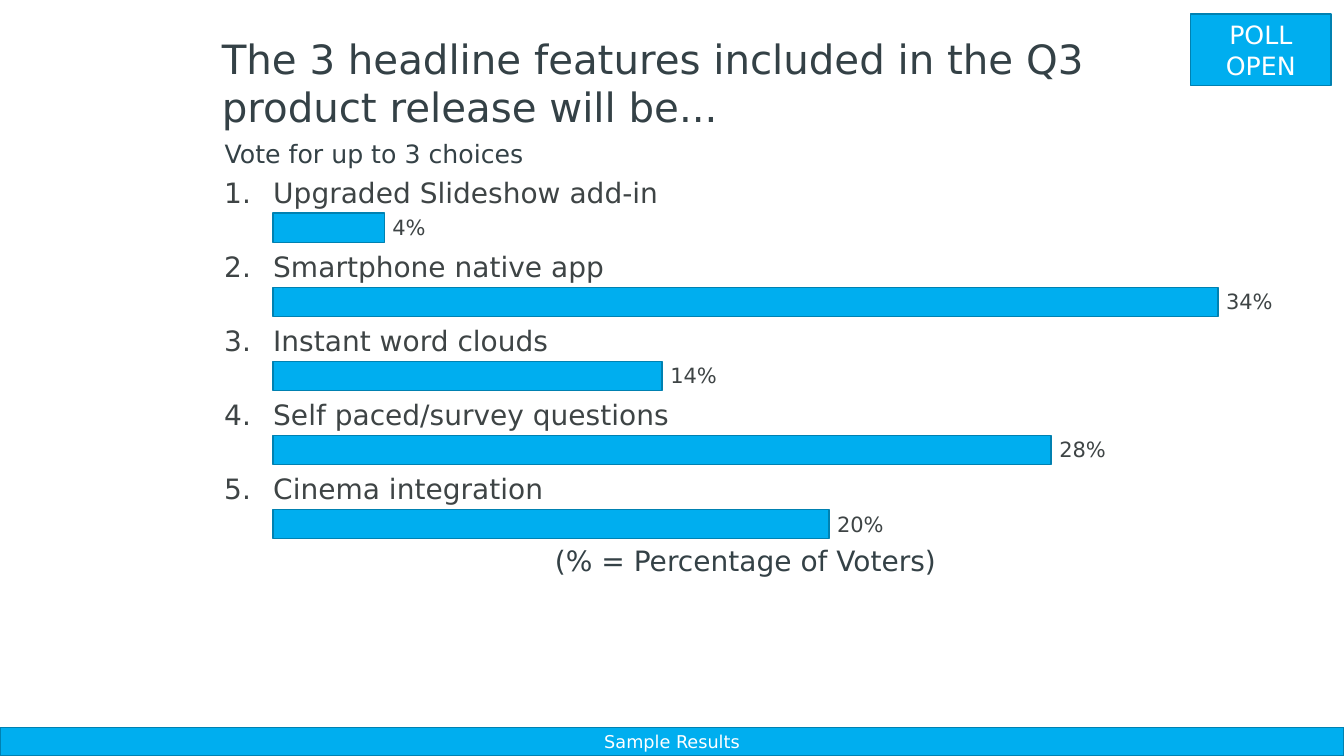
from dataclasses import dataclass
from typing import Any

import pptx
import pptx.dml.color
import pptx.enum.shapes
import pptx.enum.text
import pptx.util

Inches = pptx.util.Inches
ALIGN = pptx.enum.text.PP_ALIGN
ANCHOR = pptx.enum.text.MSO_ANCHOR

FONT = "DejaVu Sans"
BLUE, BLUE_EDGE, WHITE = "00AEEF", "0081B1", "FFFFFF"
HEADING, BODY = "344146", "3E4445"

NUMBER_LEFT, BAR_LEFT = 2.1, 2.71
FIRST_TOP, CHOICE_PITCH = 1.68, 0.735
BAR_HEIGHT, LONGEST_BAR = 0.29, 9.37


@dataclass(frozen=True)
class Area:
    left: float
    top: float
    width: float
    height: float

    def lengths(self) -> list[int]:
        return [Inches(value) for value in (self.left, self.top, self.width, self.height)]


@dataclass(frozen=True)
class TextStyle:
    size: float
    color: str
    align: Any = ALIGN.LEFT
    anchor: Any = ANCHOR.TOP
    wrap: bool = True
    insets: tuple[float, float, float, float] = (0.1, 0.05, 0.1, 0.05)


@dataclass(frozen=True)
class Choice:
    label: str
    percent: int


CHOICES = [
    Choice("Upgraded Slideshow add-in", 4),
    Choice("Smartphone native app", 34),
    Choice("Instant word clouds", 14),
    Choice("Self paced/survey questions", 28),
    Choice("Cinema integration", 20),
]

TITLE = TextStyle(28.8, HEADING, anchor=ANCHOR.MIDDLE)
FOOTER = TextStyle(12.6, WHITE, ALIGN.CENTER, ANCHOR.MIDDLE, wrap=False)
STATUS = TextStyle(18, WHITE, ALIGN.CENTER, ANCHOR.MIDDLE)
HINT = TextStyle(18, HEADING, ALIGN.CENTER, wrap=False)
NUMBER = TextStyle(20, BODY, ALIGN.RIGHT, wrap=False, insets=(0.1, 0.06, 0.22, 0))
LABEL = TextStyle(20, BODY, insets=(0, 0.06, 0, 0.03))
PERCENT = TextStyle(15, BODY, wrap=False, insets=(0.08, 0, 0, 0))
LEGEND = TextStyle(20, HEADING, ALIGN.CENTER)


def rgb(color: str) -> pptx.dml.color.RGBColor:
    return pptx.dml.color.RGBColor.from_string(color)


def write(shape: Any, text: str, style: TextStyle) -> None:
    frame = shape.text_frame
    frame.auto_size = pptx.enum.text.MSO_AUTO_SIZE.NONE
    frame.word_wrap = style.wrap
    frame.vertical_anchor = style.anchor
    (frame.margin_left, frame.margin_top,
     frame.margin_right, frame.margin_bottom) = map(Inches, style.insets)
    para = frame.paragraphs[0]
    para.alignment = style.align
    para.line_spacing = 1.0
    span = para.add_run()
    span.text = text
    span.font.name = FONT
    span.font.size = pptx.util.Pt(style.size)
    span.font.color.rgb = rgb(style.color)


def add_text(shapes: Any, area: Area, text: str, style: TextStyle) -> None:
    write(shapes.add_textbox(*area.lengths()), text, style)


def add_block(shapes: Any, area: Area) -> Any:
    """Add a blue rectangle with a darker edge."""
    block = shapes.add_shape(pptx.enum.shapes.MSO_SHAPE.RECTANGLE, *area.lengths())
    block.shadow.inherit = False
    block.fill.solid()
    block.fill.fore_color.rgb = rgb(BLUE)
    block.line.color.rgb = rgb(BLUE_EDGE)
    block.line.width = pptx.util.Pt(1)
    return block


def add_choice(page: Any, index: int, choice: Choice) -> None:
    """Group one choice's number, label, percentage and bar."""
    shapes = page.shapes.add_group_shape().shapes
    top = FIRST_TOP + index * CHOICE_PITCH
    bar_width = LONGEST_BAR * choice.percent / max(item.percent for item in CHOICES)
    percent_width = 0.44 if choice.percent < 10 else 0.58
    add_text(shapes, Area(NUMBER_LEFT, top, BAR_LEFT - NUMBER_LEFT, 0.39), f"{index + 1}.", NUMBER)
    add_text(shapes, Area(BAR_LEFT, top, 10.08, 0.42), choice.label, LABEL)
    add_text(shapes, Area(BAR_LEFT + bar_width, top + 0.45, percent_width, 0.25),
             f"{choice.percent}%", PERCENT)
    add_block(shapes, Area(BAR_LEFT, top + 0.435, bar_width, BAR_HEIGHT))


def main() -> None:
    deck = pptx.Presentation()
    deck.slide_width, deck.slide_height = Inches(13.33), Inches(7.5)
    page = deck.slides.add_slide(deck.slide_layouts[5])

    title = page.shapes.title
    title.left, title.top, title.width, title.height = Area(2.1, 0.29, 9.52, 1.06).lengths()
    write(title, "The 3 headline features included in the Q3 product release will be...", TITLE)

    write(add_block(page.shapes, Area(0, 7.22, 13.33, 0.28)), "Sample Results", FOOTER)
    write(add_block(page.shapes, Area(11.81, 0.14, 1.39, 0.71)), "POLL OPEN", STATUS)
    add_text(page.shapes, Area(NUMBER_LEFT, 1.32, 3.22, 0.4), "Vote for up to 3 choices", HINT)
    for index, choice in enumerate(CHOICES):
        add_choice(page, index, choice)
    add_text(page.shapes, Area(BAR_LEFT, 5.34, LONGEST_BAR, 0.77),
             "(% = Percentage of Voters)", LEGEND)

    deck.save("out.pptx")


if __name__ == "__main__":
    main()
